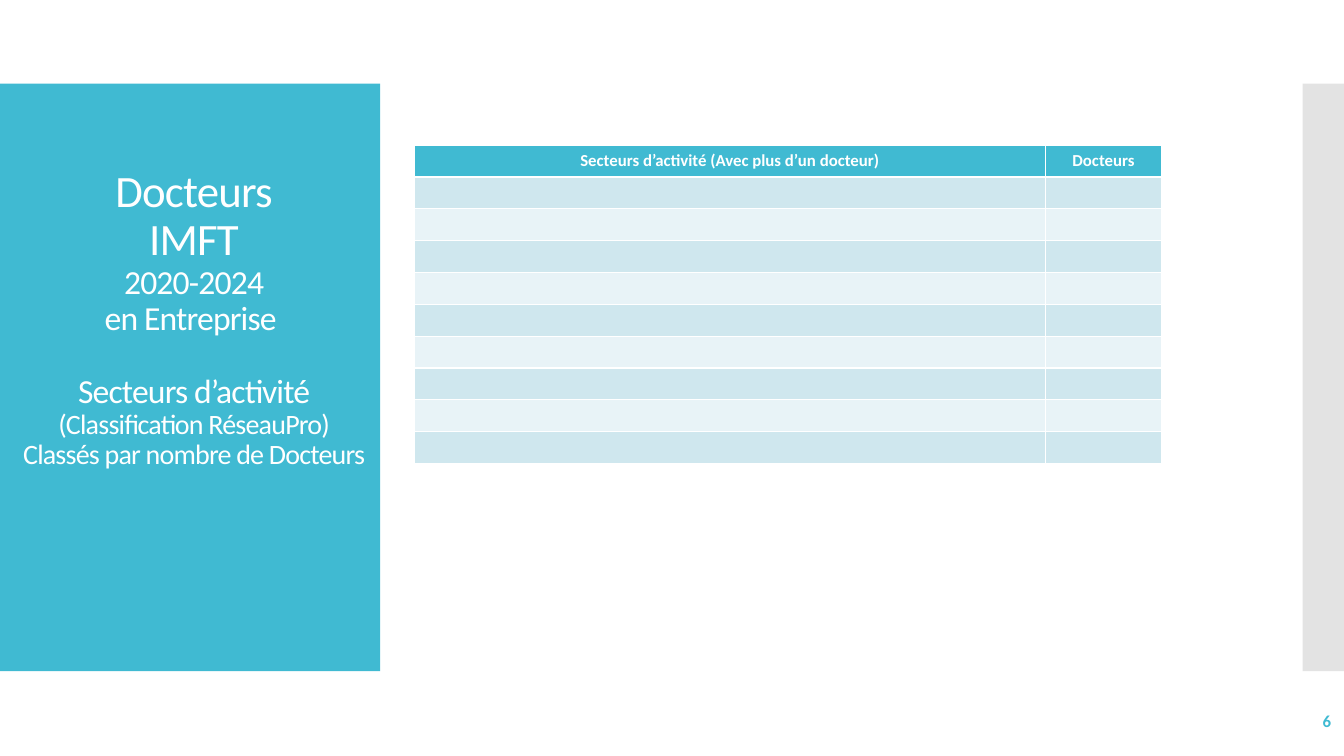
from dataclasses import dataclass

from lxml.etree import SubElement
from pptx import Presentation
from pptx.dml.color import RGBColor
from pptx.enum.shapes import MSO_SHAPE
from pptx.enum.text import MSO_ANCHOR, PP_ALIGN
from pptx.oxml.ns import qn
from pptx.slide import Slide
from pptx.text.text import TextFrame, _Paragraph
from pptx.util import Emu, Pt

EMU_PER_PX = 9144  # 100 px to the inch


@dataclass(frozen=True)
class Theme:
    font: str = "Calibri"
    accent: str = "40BAD2"
    white: str = "FFFFFF"
    side_bar: str = "E3E3E3"
    bands: tuple[str, str] = ("CFE7EE", "E8F3F7")
    large: int = 32
    medium: int = 24
    small: int = 20
    body: int = 12


@dataclass(frozen=True)
class Area:
    left: int
    top: int
    width: int
    height: int

    def emu(self) -> tuple[Emu, Emu, Emu, Emu]:
        return px(self.left), px(self.top), px(self.width), px(self.height)


@dataclass(frozen=True)
class Panel:
    area: Area
    color: str


@dataclass(frozen=True)
class TitleLine:
    text: str
    size: int
    gap_before: int = 0


THEME = Theme()
PANELS = (
    Panel(Area(0, 83, 377, 583), THEME.accent),
    Panel(Area(1292, 83, 42, 583), THEME.side_bar),
)
TITLE_AREA = Area(11, 167, 363, 459)
TITLE_LINES = (
    TitleLine("Docteurs", THEME.large),
    TitleLine("IMFT", THEME.large),
    TitleLine("2020-2024", THEME.medium),
    TitleLine("en Entreprise ", THEME.medium),
    TitleLine("Secteurs d’activité", THEME.medium, gap_before=26),
    TitleLine("(Classification RéseauPro)", THEME.small),
    TitleLine("Classés par nombre de Docteurs", THEME.small),
)
TABLE_AREA = Area(411, 144, 741, 316)
COLUMN_WIDTHS = (626, 115)
HEADINGS = ("Secteurs d’activité (Avec plus d’un docteur)", "Docteurs")
ROW_COUNT = 10
NUMBER_AREA = Area(1163, 695, 167, 40)


def px(length: int) -> Emu:
    return Emu(length * EMU_PER_PX)


def rgb(color: str) -> RGBColor:
    return RGBColor.from_string(color)


def add_span(para: _Paragraph, text: str, size: int, color: str,
             bold: bool = False, tracking: int = 0) -> None:
    span = para.add_run()
    span.text = text
    span.font.name = THEME.font
    span.font.size = Pt(size)
    span.font.bold = bold
    span.font.color.rgb = rgb(color)
    if tracking:
        span.font._element.set("spc", str(tracking))


def add_text_box(page: Slide, area: Area) -> TextFrame:
    frame = page.shapes.add_textbox(*area.emu()).text_frame
    frame.word_wrap = True
    return frame


def add_panel(page: Slide, panel: Panel) -> None:
    box = page.shapes.add_shape(MSO_SHAPE.RECTANGLE, *panel.area.emu())
    box.shadow.inherit = False
    box.fill.solid()
    box.fill.fore_color.rgb = rgb(panel.color)
    box.line.fill.background()


def add_title(page: Slide) -> None:
    frame = add_text_box(page, TITLE_AREA)
    frame.margin_left = frame.margin_right = frame.margin_top = 0
    for index, line in enumerate(TITLE_LINES):
        para = frame.add_paragraph() if index else frame.paragraphs[0]
        para.alignment = PP_ALIGN.CENTER
        para.line_spacing = 0.9
        para.space_before = Pt(line.gap_before)
        add_span(para, line.text, line.size, THEME.white, tracking=-60)


def add_sector_table(page: Slide) -> None:
    table = page.shapes.add_table(
        ROW_COUNT, len(HEADINGS), *TABLE_AREA.emu()).table
    for column, width in zip(table.columns, COLUMN_WIDTHS):
        column.width = px(width)
    for index, row in enumerate(table.rows):
        row.height = Emu(px(TABLE_AREA.height) // ROW_COUNT)
        color = THEME.bands[(index - 1) % 2] if index else THEME.accent
        for cell, heading in zip(row.cells, HEADINGS):
            cell.fill.solid()
            cell.fill.fore_color.rgb = rgb(color)
            para = cell.text_frame.paragraphs[0]
            para.alignment = PP_ALIGN.CENTER
            if index == 0:
                add_span(para, heading, THEME.body, THEME.white, bold=True)
            else:
                # Small type keeps the empty rows low
                SubElement(para._p, qn("a:endParaRPr"), sz=str(THEME.body * 100))


def add_page_number(page: Slide) -> None:
    frame = add_text_box(page, NUMBER_AREA)
    frame.vertical_anchor = MSO_ANCHOR.MIDDLE
    para = frame.paragraphs[0]
    para.alignment = PP_ALIGN.RIGHT
    add_span(para, "6", THEME.body, THEME.accent, bold=True)


def main() -> None:
    deck = Presentation()
    deck.slide_width, deck.slide_height = px(1333), px(750)
    page = deck.slides.add_slide(deck.slide_layouts[6])

    # Side panels
    for panel in PANELS:
        add_panel(page, panel)

    # Title, table and page number
    add_title(page)
    add_sector_table(page)
    add_page_number(page)

    deck.save("out.pptx")


if __name__ == "__main__":
    main()
